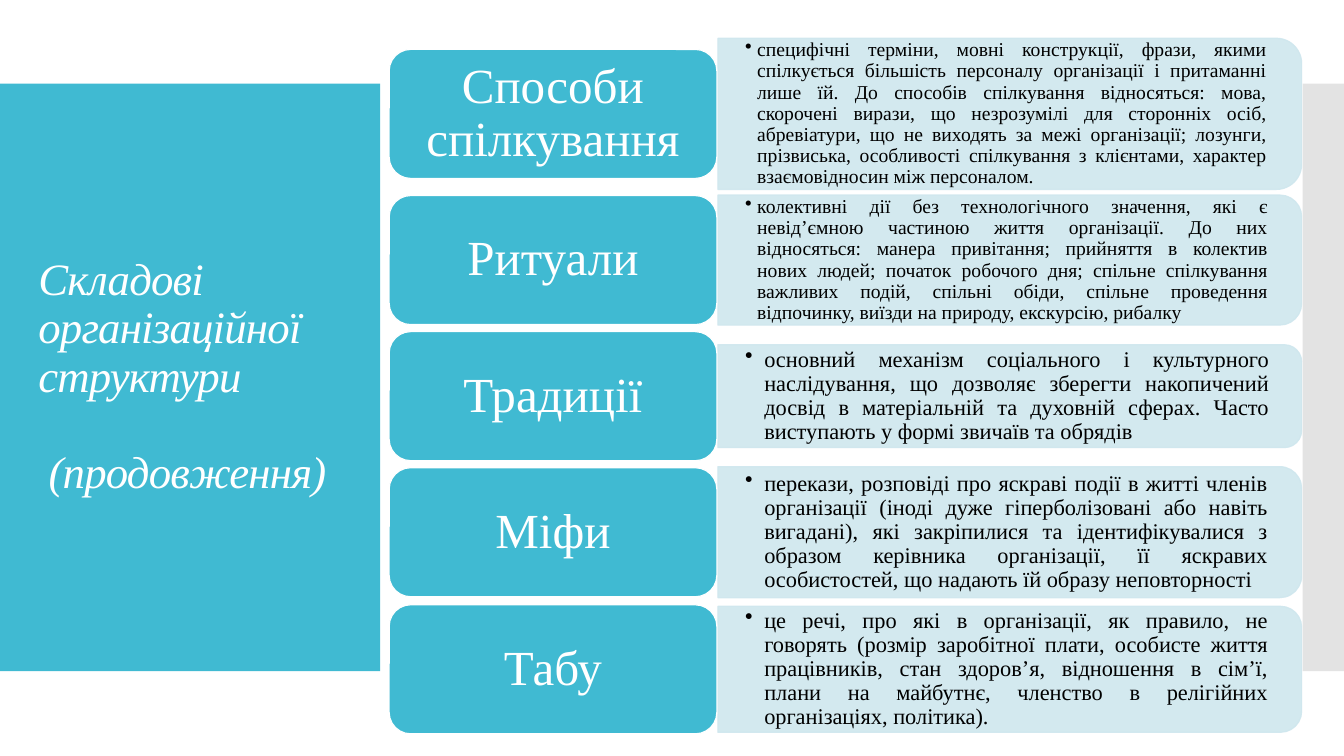
"""Builds a slide on the components of organisational structure."""
from lxml import etree
from pptx import Presentation
from pptx.dml.color import RGBColor
from pptx.enum import shapes, text
from pptx.oxml.ns import qn
from pptx.util import Inches, Pt

TITLE = "Складові організаційної структури\v\v (продовження)"
COMPONENTS = [
    dict(name="Способи спілкування", middle=1.13, height=1.5, size=14, indent=0.12,
         details="специфічні терміни, мовні конструкції, фрази, якими спілкується більшість "
                 "персоналу організації і притаманні лише їй. До способів спілкування "
                 "відносяться: мова, скорочені вирази, що незрозумілі для сторонніх осіб, "
                 "абревіатури, що не виходять за межі організації; лозунги, прізвиська, "
                 "особливості спілкування з клієнтами, характер взаємовідносин між персоналом."),
    dict(name="Ритуали", middle=2.58, height=1.29, size=14, indent=0.12,
         details="колективні дії без технологічного значення, які є невід’ємною частиною життя "
                 "організації. До них відносяться: манера привітання; прийняття в колектив нових "
                 "людей; початок робочого дня; спільне спілкування важливих подій, спільні обіди, "
                 "спільне проведення відпочинку, виїзди на природу, екскурсію, рибалку"),
    dict(name="Традиції", middle=3.93, height=1.02, size=16, indent=0.19,
         details="основний механізм соціального і культурного наслідування, що дозволяє зберегти "
                 "накопичений досвід в матеріальній та духовній сферах. Часто виступають у формі "
                 "звичаїв та обрядів"),
    dict(name="Міфи", middle=5.28, height=1.3, size=16, indent=0.19,
         details="перекази, розповіді про яскраві події в житті членів організації (іноді дуже "
                 "гіперболізовані або навіть вигадані), які закріпилися та ідентифікувалися з "
                 "образом керівника організації, її яскравих особистостей, що надають їй образу "
                 "неповторності"),
    dict(name="Табу", middle=6.64, height=1.25, size=16, indent=0.19,
         details="це речі, про які в організації, як правило, не говорять (розмір заробітної "
                 "плати, особисте життя працівників, стан здоров’я, відношення в сім’ї, плани на "
                 "майбутнє, членство в релігійних організаціях, політика)."),
]
COLORS = dict(accent="40BAD2", panel="CFE7EE", edge="C8C8C8", light="FFFFFF", dark="000000")
FONT = "Times New Roman"
NAME_LEFT, NAME_WIDTH, NAME_HEIGHT = 3.86, 3.25, 1.28
PANEL_LEFT, PANEL_WIDTH = 7.12, 5.79


def paint(fill, color, opacity=100):
    fill.solid()
    fill.fore_color.rgb = RGBColor.from_string(COLORS[color])
    return opacity


def fade(shape, opacity):
    for color in shape.element.spPr.iter(qn("a:srgbClr")):
        etree.SubElement(color, qn("a:alpha"), val=str(opacity * 1000))


def add_block(parent, kind, left, top, width, height, color, outline=None):
    block = parent.add_shape(kind, Inches(left), Inches(top), Inches(width), Inches(height))
    block.shadow.inherit = False
    paint(block.fill, color)
    if outline:
        paint(block.line.fill, outline)
        block.line.width = Pt(0.85)
    else:
        block.line.fill.background()
    return block


def write(shape, content, size, color, align, insets=(0.1, 0.05)):
    frame = shape.text_frame
    frame.word_wrap = True
    frame.auto_size = text.MSO_AUTO_SIZE.NONE
    frame.vertical_anchor = text.MSO_ANCHOR.MIDDLE
    frame.margin_left = frame.margin_right = Inches(insets[0])
    frame.margin_top = frame.margin_bottom = Inches(insets[1])
    frame.text = content
    paragraph = frame.paragraphs[0]
    paragraph.alignment = align
    paragraph.line_spacing = 0.9
    paragraph.font.name = FONT
    paragraph.font.size = Pt(size)
    paragraph.font.color.rgb = RGBColor.from_string(COLORS[color])
    return paragraph


def add_component(parent, name, middle, height, size, indent, details):
    panel = add_block(parent, shapes.MSO_SHAPE.ROUND_2_SAME_RECTANGLE,
                      PANEL_LEFT + (PANEL_WIDTH - height) / 2, middle - PANEL_WIDTH / 2,
                      height, PANEL_WIDTH, "panel", "panel")
    panel.rotation = 90
    fade(panel, 90)

    corner = 0.05 * height
    description = parent.add_textbox(
        Inches(PANEL_LEFT), Inches(middle - height / 2 + corner),
        Inches(PANEL_WIDTH - corner), Inches(height - 2 * corner))
    paragraph = write(description, details, size, "dark", text.PP_ALIGN.JUSTIFY, (0.27, 0.14))
    paragraph.level = 1
    properties = paragraph.runs[0].font and paragraph.alignment and description.element.find(
        ".//" + qn("a:pPr"))
    properties.set("marL", str(Inches(indent)))
    properties.set("indent", str(-Inches(indent)))
    bullet = etree.Element(qn("a:buChar"), char="•")
    properties.find(qn("a:defRPr")).addprevious(bullet)

    label = add_block(parent, shapes.MSO_SHAPE.ROUNDED_RECTANGLE, NAME_LEFT,
                      middle - NAME_HEIGHT / 2, NAME_WIDTH, NAME_HEIGHT, "accent", "light")
    write(label, name, 35, "light", text.PP_ALIGN.CENTER, (0.15, 0.07))


def main():
    deck = Presentation()
    deck.slide_width, deck.slide_height = Inches(13.33), Inches(7.5)
    slide = deck.slides.add_slide(deck.slide_layouts[5])
    rectangle = shapes.MSO_SHAPE.RECTANGLE
    add_block(slide.shapes, rectangle, 0, 0.83, 3.77, 5.83, "accent")
    fade(add_block(slide.shapes, rectangle, 12.92, 0.83, 0.41, 5.83, "edge"), 50)

    title = slide.shapes.title
    title.element.getparent().append(title.element)
    title.left, title.top = Inches(0.28), Inches(1.23)
    title.width, title.height = Inches(3.22), Inches(5.03)
    heading = write(title, TITLE, 32, "light", text.PP_ALIGN.LEFT)
    heading.font.italic = True
    for run in heading.runs:
        run.font.italic = True
        run.font.size = Pt(32)
    for properties in title.element.iter(qn("a:rPr"), qn("a:defRPr")):
        properties.set("spc", "-60")

    diagram = slide.shapes.add_group_shape()
    for component in COMPONENTS:
        add_component(diagram.shapes, **component)
    deck.save("out.pptx")


if __name__ == "__main__":
    main()
